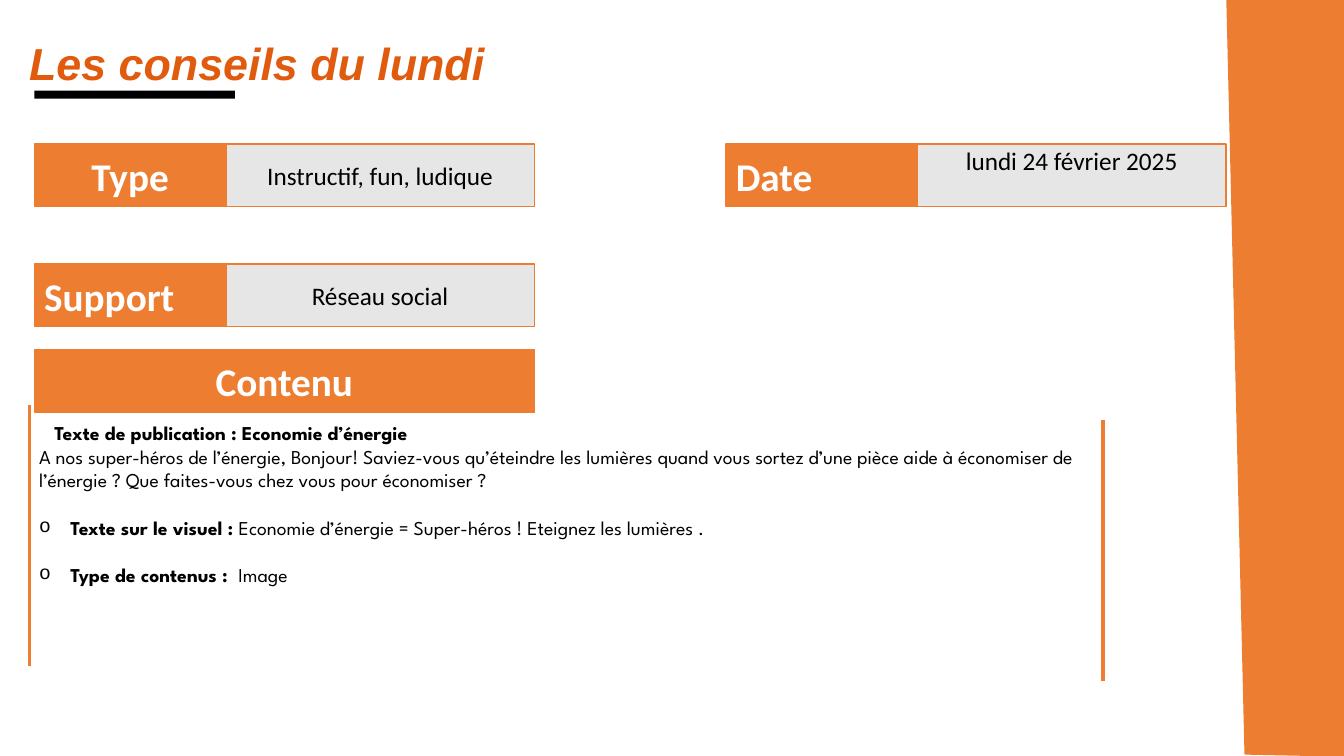
from pptx import Presentation
from pptx.dml.color import RGBColor
from pptx.enum.shapes import MSO_CONNECTOR as CONN, MSO_SHAPE as SHAPE
from pptx.enum.text import MSO_ANCHOR as ANCHOR, PP_ALIGN as ALIGN
from pptx.util import Inches, Pt
from lxml import etree

ORANGE = RGBColor(0xED, 0x7D, 0x31)
TITLE = RGBColor(0xE1, 0x5B, 0x0F)
GREY = RGBColor(0xE7, 0xE6, 0xE6)
BLACK = RGBColor(0, 0, 0)
WHITE = RGBColor(0xFF, 0xFF, 0xFF)
A = "{http://schemas.openxmlformats.org/drawingml/2006/main}"

prs = Presentation()
prs.slide_width, prs.slide_height = Inches(13.33), Inches(7.5)
s = prs.slides.add_slide(prs.slide_layouts[6])

LEFT, RIGHT = 0.34, 7.2
LABEL_W, VALUE_W, ROW_H = 1.9, 3.06, 0.62
ROWS = [1.43, 2.62, 3.47]

LABEL = {"name": "Calibri", "size": Pt(28), "bold": True, "color": WHITE}
VALUE = {"name": "Calibri", "size": Pt(18), "bold": False, "color": BLACK}
HEAD = {"name": "Arial", "size": Pt(32), "bold": True, "italic": True, "color": TITLE}
BODY = {"name": "League Spartan", "size": Pt(14), "bold": False, "color": BLACK}
STRONG = {**BODY, "bold": True}


def add_run(p, text, fmt):
    r = p.add_run()
    r.text = text
    for key, val in fmt.items():
        if key == "color":
            r.font.color.rgb = val
        else:
            setattr(r.font, key, val)


def add_box(x, y, w, h, fill, line=None):
    sp = s.shapes.add_shape(SHAPE.RECTANGLE, Inches(x), Inches(y), Inches(w), Inches(h))
    sp.shadow.inherit = False
    sp.fill.solid()
    sp.fill.fore_color.rgb = fill
    if line is None:
        sp.line.fill.background()
    else:
        sp.line.color.rgb = line
        sp.line.width = Pt(1)
    return sp


fb = s.shapes.build_freeform(Inches(12.17), 0)
fb.add_line_segments([(Inches(x), Inches(y)) for x, y in
                      [(13.33, 0), (13.33, 7.5), (12.35, 7.48)]], close=True)
band = fb.convert_to_shape()
band.shadow.inherit = False
band.fill.solid()
band.fill.fore_color.rgb = ORANGE
band.line.color.rgb = ORANGE
band.line.width = Pt(1)

add_box(LEFT, 0.9, 1.99, 0.08, BLACK)

for x, y in [(0.29, 4.02), (10.94, 4.17)]:
    ln = s.shapes.add_connector(CONN.STRAIGHT, Inches(x), Inches(y), Inches(x), Inches(y + 2.59))
    ln.line.color.rgb = ORANGE
    ln.line.width = Pt(2.25)
    etree.SubElement(ln._element.spPr, A + "effectLst")

VALUE_X = LEFT + LABEL_W
cells = [
    (LEFT, ROWS[0], LABEL_W, ORANGE, "Type", LABEL, ALIGN.CENTER, ANCHOR.MIDDLE),
    (VALUE_X, ROWS[0], VALUE_W, GREY, "Instructif, fun, ludique", VALUE, ALIGN.CENTER, ANCHOR.MIDDLE),
    (RIGHT + LABEL_W, ROWS[0], VALUE_W, GREY, "lundi 24 février 2025", VALUE, ALIGN.CENTER, ANCHOR.TOP),
    (RIGHT, ROWS[0], LABEL_W, ORANGE, "Date", LABEL, ALIGN.LEFT, ANCHOR.MIDDLE),
    (LEFT, ROWS[1], LABEL_W, ORANGE, "Support", LABEL, ALIGN.LEFT, ANCHOR.MIDDLE),
    (VALUE_X, ROWS[1], VALUE_W, GREY, "Réseau social", VALUE, ALIGN.CENTER, ANCHOR.MIDDLE),
    (LEFT, ROWS[2], LABEL_W + VALUE_W, ORANGE, "Contenu", LABEL, ALIGN.CENTER, ANCHOR.MIDDLE),
]
for x, y, w, fill, text, fmt, align, anchor in cells:
    tf = add_box(x, y, w, ROW_H, fill, ORANGE).text_frame
    tf.vertical_anchor = anchor
    tf.margin_top = tf.margin_bottom = Inches(0.01)
    tf.paragraphs[0].alignment = align
    add_run(tf.paragraphs[0], text, fmt)

tf = s.shapes.add_textbox(Inches(0.19), Inches(0.3), Inches(11.03), Inches(0.52)).text_frame
tf.word_wrap = True
add_run(tf.paragraphs[0], "Les conseils du lundi", HEAD)

tf = s.shapes.add_textbox(Inches(0.29), Inches(4.13), Inches(10.74), Inches(1.95)).text_frame
tf.word_wrap = True
paras = [
    (0, 0.15, [("Texte de publication : Economie d’énergie", STRONG)]),
    (0, 0, [("A nos super-héros de l’énergie, Bonjour! Saviez-vous qu’éteindre les lumières "
             "quand vous sortez d’une pièce aide à économiser de l’énergie ? "
             "Que faites-vous chez vous pour économiser ?", BODY)]),
    (0.31, -0.31, [("Texte sur le visuel : ", STRONG),
                   ("Economie d’énergie = Super-héros ! Eteignez les lumières .", BODY)]),
    (0.31, -0.31, [("Type de contenus :  ", STRONG), ("Image", BODY)]),
]
for i, (margin, indent, runs) in enumerate(paras):
    p = tf.add_paragraph() if i else tf.paragraphs[0]
    pPr = p._p.get_or_add_pPr()
    pPr.set("marL", str(Inches(margin)))
    pPr.set("indent", str(Inches(indent)))
    if margin:
        p.alignment = ALIGN.JUSTIFY
        p.space_before = Pt(17)
        etree.SubElement(pPr, A + "buFont", typeface="Courier New")
        etree.SubElement(pPr, A + "buChar", char="o")
    for text, fmt in runs:
        add_run(p, text, fmt)

prs.save("out.pptx")
